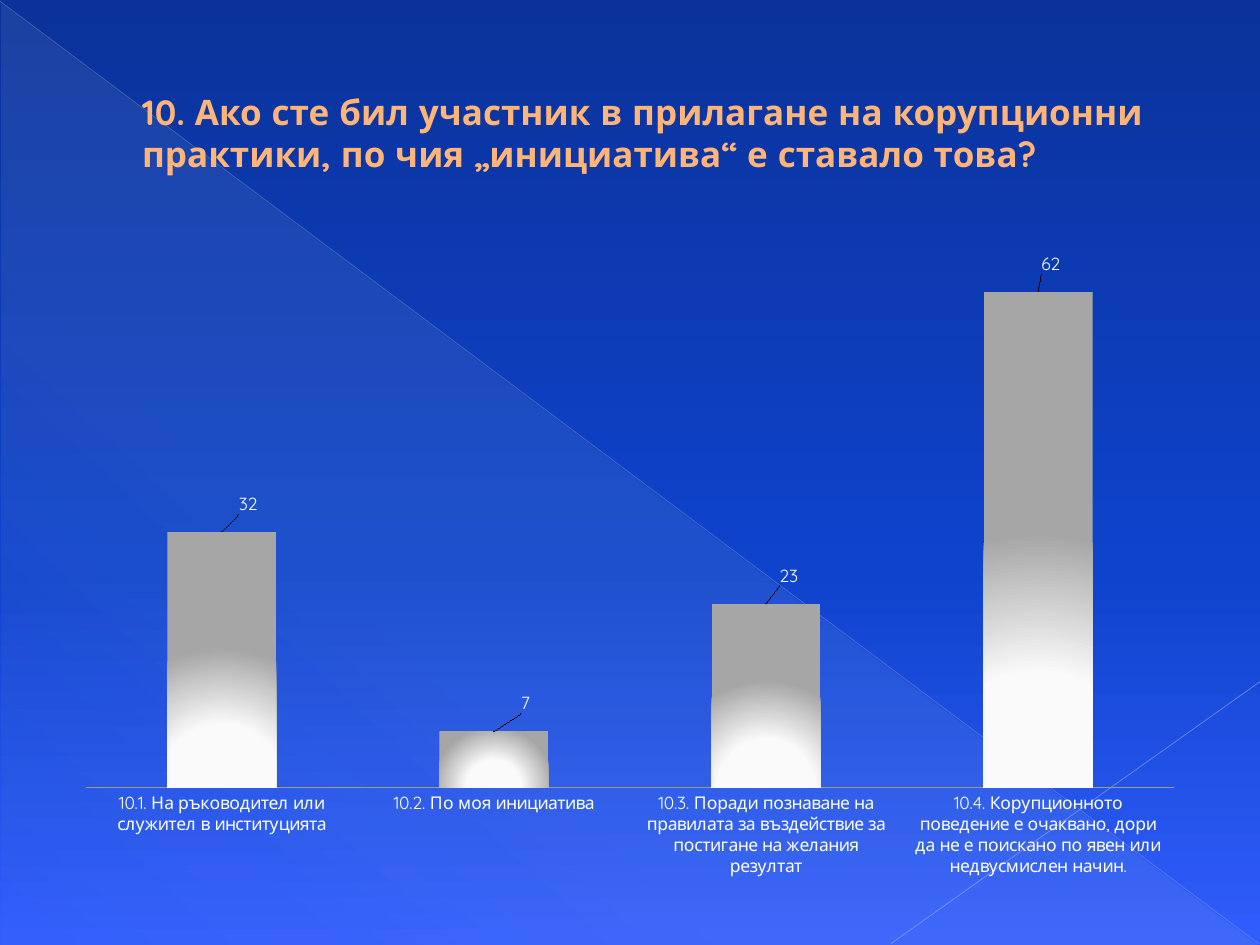
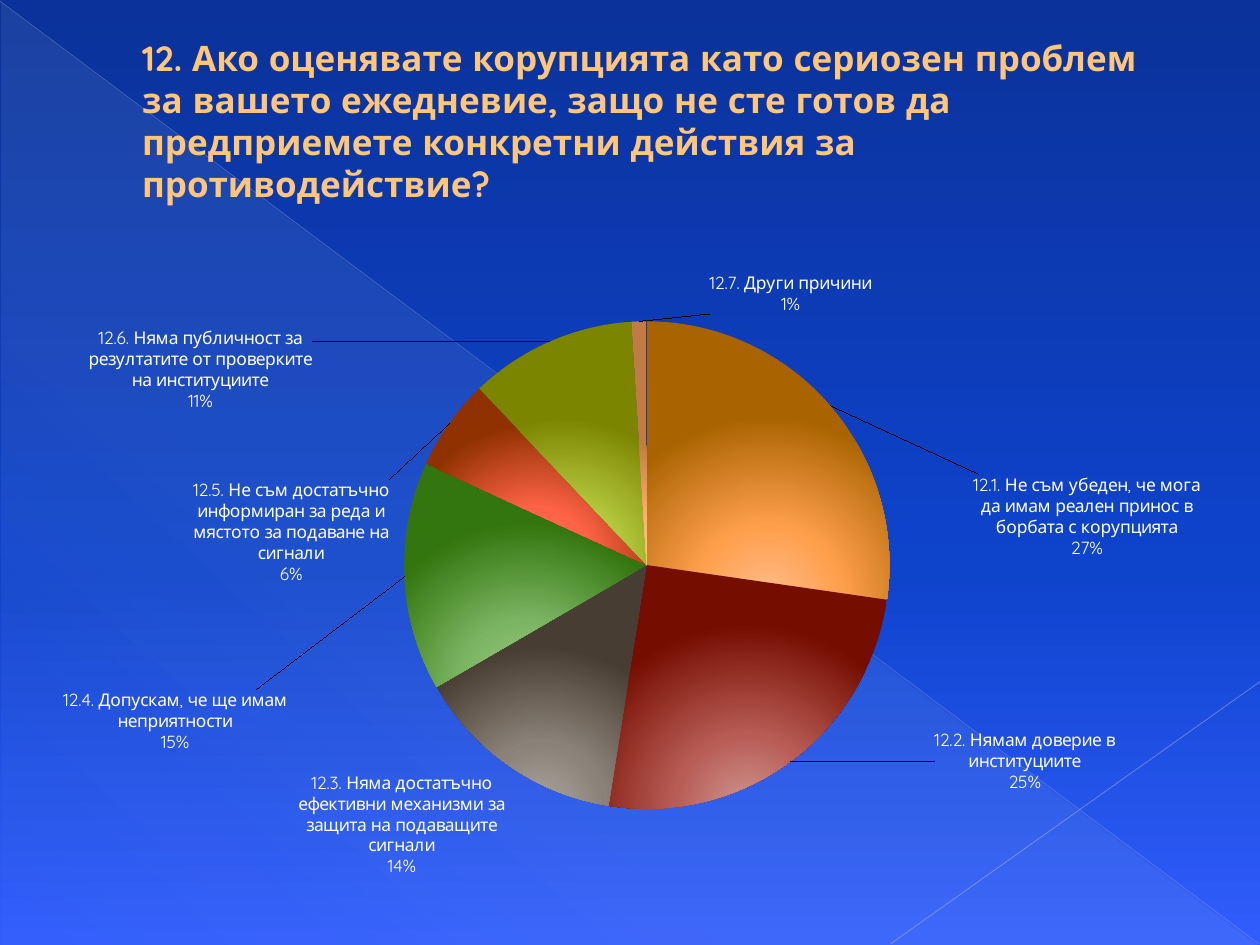
from dataclasses import dataclass

import lxml.etree
import pptx
import pptx.chart.data
import pptx.dml.color
import pptx.enum.chart
import pptx.enum.shapes
import pptx.enum.text
import pptx.oxml
import pptx.oxml.ns
import pptx.util
from pptx.util import Inches

FONT = "Quicksand"
COLORS = {
    "white": "FFFFFF", "axis": "9F9A85", "title_outline": "AF6F18",
    "bar_title": "FFB577", "pie_title": "FEC67B",
    "sky_top": "0A329A", "sky_middle": "0E43CC", "sky_bottom": "315DFC",
    "veil": "CCDDEA", "diagonal": "ADB6DC", "corner": "B7BEDF",
    "bar_light": "FAFAFA", "bar_dark": "A6A6A6",
}
# Each slice glows from light at its foot to dark at its rim
SLICE_COLORS = [
    ("FFBC8C", "FF9F4C", "A96300"), ("D09692", "B85C55", "750D00"),
    ("A9A49D", "8A8178", "483D32"), ("9CC98A", "7BB562", "33750E"),
    ("FF7850", "FF6347", "8F3100"), ("D0E068", "B5CA40", "7C8500"),
    ("FFC9A0", "FFB070", "C07C44"),
]
NAMESPACES = ('xmlns:a="http://schemas.openxmlformats.org/drawingml/2006/main" '
              'xmlns:c="http://schemas.openxmlformats.org/drawingml/2006/chart"')
GLOW = ('<a:path path="circle"><a:fillToRect l="50000" t="100000" '
        'r="50000" b="0"/></a:path>')


@dataclass
class Box:
    left: float
    top: float
    width: float
    height: float

    def lengths(self) -> list:
        return [Inches(value) for value in
                (self.left, self.top, self.width, self.height)]


@dataclass
class Stop:
    position: int
    color: str
    opacity: int = 100


@dataclass
class Line:
    start: tuple
    end: tuple
    color: str
    width: float
    opacity: int


@dataclass
class Answer:
    text: str
    percent: int
    label_shift: tuple | None = None  # inches from the usual label place


@dataclass
class Question:
    text: str
    color: str
    title: Box
    chart: Box
    plot: Box  # inside the chart
    answers: list


BACKGROUND = [Stop(0, COLORS["sky_top"]), Stop(60, COLORS["sky_middle"]),
              Stop(100, COLORS["sky_bottom"])]
VEIL = [Stop(0, COLORS["veil"], 10), Stop(70, COLORS["veil"], 8),
        Stop(100, COLORS["veil"], 1)]
LINES = [Line((0, 0.01), (9.99, 7.49), COLORS["diagonal"], 0.39, 35),
         Line((10, 5.41), (7.07, 7.49), COLORS["corner"], 0.47, 45)]
BAR_STOPS = [Stop(0, COLORS["bar_light"]), Stop(45, COLORS["bar_light"]),
             Stop(100, COLORS["bar_dark"])]

INITIATIVE = Question(
    "10. Ако сте бил участник в прилагане на корупционни практики, "
    "по чия „инициатива“ е ставало това?",
    COLORS["bar_title"], Box(0.5, 0.29, 9, 1.53), Box(0.5, 1.7, 9, 5.36),
    Box(0.18, 0.11, 8.64, 4.44),
    [Answer("10.1. На ръководител или служител в институцията", 32, (0.21, -0.1)),
     Answer("10.2. По моя инициатива", 7, (0.25, -0.1)),
     Answer("10.3. Поради познаване на правилата за въздействие за постигане "
            "на желания резултат", 23, (0.18, -0.1)),
     Answer("10.4. Корупционното поведение е очаквано, дори да не е поискано "
            "по явен или недвусмислен начин.", 62, (0.1, -0.1))])

REASONS = Question(
    "12.\u00a0Ако оценявате корупцията като сериозен проблем за вашето ежедневие, "
    "защо не сте готов да предприемете конкретни действия за противодействие?",
    COLORS["pie_title"], Box(0.5, 0.29, 9, 1.33), Box(0.5, 1.62, 9.07, 5.59),
    Box(2.72, 0.93, 3.87, 3.87),
    [Answer("12.1. Не съм убеден, че мога да имам реален принос в борбата "
            "с корупцията", 27, (1.14, 1.25)),
     Answer("12.2. Нямам доверие в институциите", 25, (1.11, -0.3)),
     Answer("12.3. Няма достатъчно ефективни механизми за защита на "
            "подаващите сигнали", 14),
     Answer("12.4. Допускам, че ще имам неприятности", 15, (-1.12, 1.14)),
     Answer("12.5. Не съм достатъчно информиран за реда и мястото за "
            "подаване на сигнали", 6, (-0.43, 1.31)),
     Answer("12.6. Няма публичност за резултатите от проверките на "
            "институциите", 11, (-1.87, 0.61)),
     Answer("12.7. Други причини", 1, (1.21, 0))])


def rgb(color: str) -> pptx.dml.color.RGBColor:
    return pptx.dml.color.RGBColor.from_string(color)


def parse_xml(tag: str, content: str, attributes: str = ""):
    return pptx.oxml.parse_xml(
        f"<{tag} {NAMESPACES} {attributes}>{content}</{tag}>")


def gradient(stops: list, direction: str):
    marks = "".join(
        f'<a:gs pos="{stop.position * 1000}"><a:srgbClr val="{stop.color}">'
        f'<a:alpha val="{stop.opacity * 1000}"/></a:srgbClr></a:gs>'
        for stop in stops)
    return parse_xml("a:gradFill", f"<a:gsLst>{marks}</a:gsLst>{direction}",
                     'rotWithShape="1"')


def linear(degrees: int) -> str:
    return f'<a:lin ang="{degrees * 60000}" scaled="0"/>'


def paint_gradient(fill, parent, stops: list, direction: str) -> None:
    """Set a solid fill, then put the gradient in its place."""
    fill.solid()
    solid = next(parent.iter(pptx.oxml.ns.qn("a:solidFill")))
    solid.getparent().replace(solid, gradient(stops, direction))


def add_line(slide, line: Line) -> None:
    connector = slide.shapes.add_connector(
        pptx.enum.shapes.MSO_CONNECTOR.STRAIGHT,
        *[Inches(value) for value in line.start + line.end])
    connector.line.color.rgb = rgb(line.color)
    connector.line.width = pptx.util.Pt(line.width)
    color = next(connector.element.spPr.iter(pptx.oxml.ns.qn("a:srgbClr")))
    lxml.etree.SubElement(color, pptx.oxml.ns.qn("a:alpha"),
                          val=str(line.opacity * 1000))
    connector.element.spPr.append(parse_xml("a:effectLst", ""))


def add_text(slide, text: str, *, box: Box, color: str, size: int, bold: bool,
             indent: float, outline: str) -> None:
    shape = slide.shapes.add_textbox(*box.lengths())
    frame = shape.text_frame
    frame.word_wrap = True
    frame.vertical_anchor = pptx.enum.text.MSO_ANCHOR.MIDDLE
    paragraph = frame.paragraphs[0]
    paragraph._p.get_or_add_pPr().set("marL", str(Inches(indent)))
    run = paragraph.add_run()
    run.text = text
    run.font.name = FONT
    run.font.size = pptx.util.Pt(size)
    run.font.bold = bold
    run.font.color.rgb = rgb(color)
    run._r.get_or_add_rPr().insert(0, parse_xml(
        "a:ln", f'<a:solidFill><a:srgbClr val="{outline}"/></a:solidFill>',
        f'w="{pptx.util.Pt(0.5)}"'))


def manual_layout(chart_box: Box, x: float, y: float, size: tuple = ()):
    """Turn inches inside the chart into a layout by fractions."""
    content = ""
    if size:
        content = ('<c:layoutTarget val="inner"/><c:xMode val="edge"/>'
                   '<c:yMode val="edge"/>')
    lengths = (x, y) + size
    spans = (chart_box.width, chart_box.height) * 2
    for name, length, span in zip("xywh", lengths, spans):
        content += f'<c:{name} val="{length / span:.4f}"/>'
    return parse_xml("c:layout", f"<c:manualLayout>{content}</c:manualLayout>")


def add_labels(chart, question: Question, is_pie: bool) -> None:
    shows = (f'<c:dLblPos val="outEnd"/><c:showLegendKey val="0"/>'
             f'<c:showVal val="{int(not is_pie)}"/>'
             f'<c:showCatName val="{int(is_pie)}"/><c:showSerName val="0"/>'
             f'<c:showPercent val="{int(is_pie)}"/><c:showBubbleSize val="0"/>')
    if is_pie:
        shows += "<c:separator>\n</c:separator>"
    number_format = "0%" if is_pie else "General"
    shows = f'<c:numFmt formatCode="{number_format}" sourceLinked="0"/>' + shows
    leaders = '<c:showLeaderLines val="1"/>' if is_pie else ""
    labels = parse_xml("c:dLbls", shows + leaders)
    place = 0
    for index, answer in enumerate(question.answers):
        if answer.label_shift is None:
            continue
        label = parse_xml("c:dLbl", f'<c:idx val="{index}"/>{shows}')
        label.insert(1, manual_layout(question.chart, *answer.label_shift))
        labels.insert(place, label)
        place += 1
    series = chart.plots[0].series[0]._element
    series.find(pptx.oxml.ns.qn("c:cat")).addprevious(labels)


def add_question_chart(slide, question: Question, chart_type):
    data = pptx.chart.data.CategoryChartData()
    data.categories = [answer.text for answer in question.answers]
    data.add_series("Series 1", [answer.percent for answer in question.answers])
    chart = slide.shapes.add_chart(
        chart_type, *question.chart.lengths(), data).chart
    chart.has_title = False
    chart.has_legend = False
    chart.font.name = FONT
    chart.font.size = pptx.util.Pt(10)
    chart.font.color.rgb = rgb(COLORS["white"])
    plot_area = next(chart._chartSpace.iter(pptx.oxml.ns.qn("c:plotArea")))
    for layout in plot_area.findall(pptx.oxml.ns.qn("c:layout")):
        plot_area.remove(layout)
    plot = question.plot
    plot_area.insert(0, manual_layout(question.chart, plot.left, plot.top,
                                      (plot.width, plot.height)))
    add_labels(chart, question, chart_type == pptx.enum.chart.XL_CHART_TYPE.PIE)
    return chart


def add_question_slide(presentation, question: Question, chart_type):
    slide = presentation.slides.add_slide(presentation.slide_layouts[6])
    # Shared backdrop
    paint_gradient(slide.background.fill, slide.element, BACKGROUND, linear(90))
    veil = slide.shapes.add_shape(
        pptx.enum.shapes.MSO_SHAPE.RIGHT_TRIANGLE,
        *Box(0.01, 0.02, 9.98, 7.48).lengths())
    veil.shadow.inherit = False
    veil.line.fill.background()
    paint_gradient(veil.fill, veil.element.spPr, VEIL, linear(133))
    for line in LINES:
        add_line(slide, line)
    # Question and answers
    add_text(slide, question.text, box=question.title, color=question.color,
             size=20, bold=True, indent=0.53, outline=COLORS["title_outline"])
    return add_question_chart(slide, question, chart_type)


def style_bars(chart) -> None:
    plot = chart.plots[0]
    plot.gap_width = 150
    plot.vary_by_categories = False
    series = plot.series[0]
    paint_gradient(series.format.fill, series._element, BAR_STOPS, GLOW)
    value_axis = chart.value_axis
    value_axis.minimum_scale = 0
    value_axis.maximum_scale = 70
    value_axis.has_major_gridlines = False
    value_axis.visible = False
    category_axis = chart.category_axis
    category_axis.major_tick_mark = pptx.enum.chart.XL_TICK_MARK.NONE
    category_axis.format.line.color.rgb = rgb(COLORS["axis"])


def style_slices(chart) -> None:
    plot = chart.plots[0]
    plot.vary_by_categories = True
    series = plot.series[0]
    for index, colors in enumerate(SLICE_COLORS):
        stops = [Stop(position, color)
                 for position, color in zip((0, 40, 100), colors)]
        slice_format = series.points[index].format
        slice_format.line.fill.background()
        paint_gradient(slice_format.fill, series._element, stops, GLOW)


def main() -> None:
    presentation = pptx.Presentation()
    presentation.slide_width = Inches(10)
    presentation.slide_height = Inches(7.5)
    chart_types = pptx.enum.chart.XL_CHART_TYPE
    style_bars(add_question_slide(
        presentation, INITIATIVE, chart_types.COLUMN_CLUSTERED))
    style_slices(add_question_slide(presentation, REASONS, chart_types.PIE))
    presentation.save("out.pptx")


if __name__ == "__main__":
    main()
